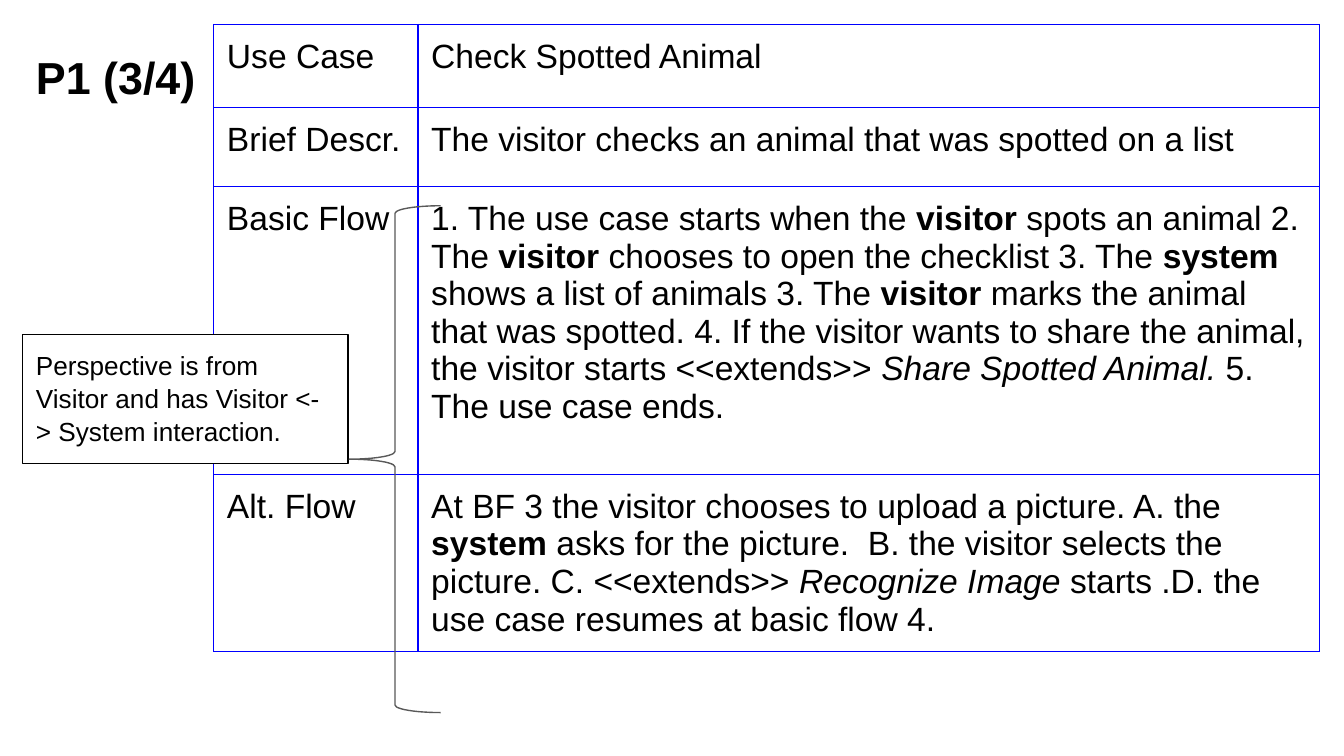
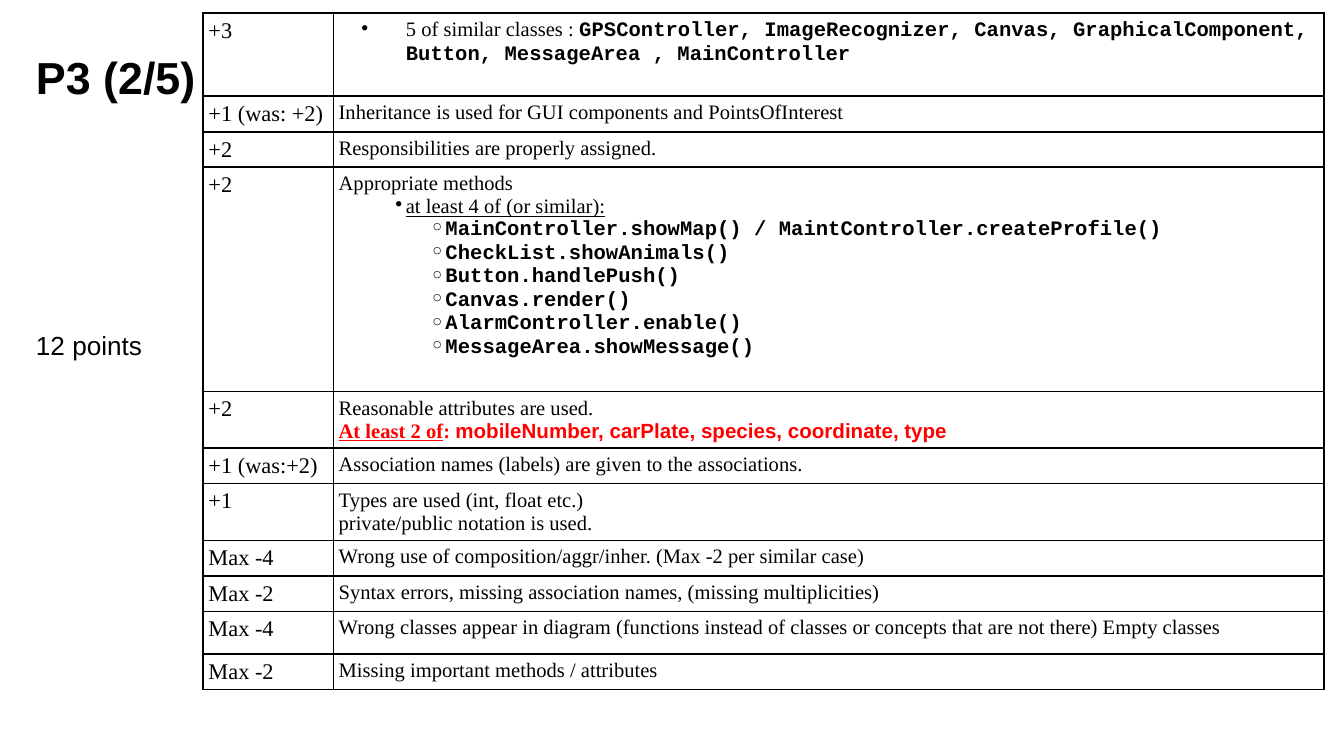
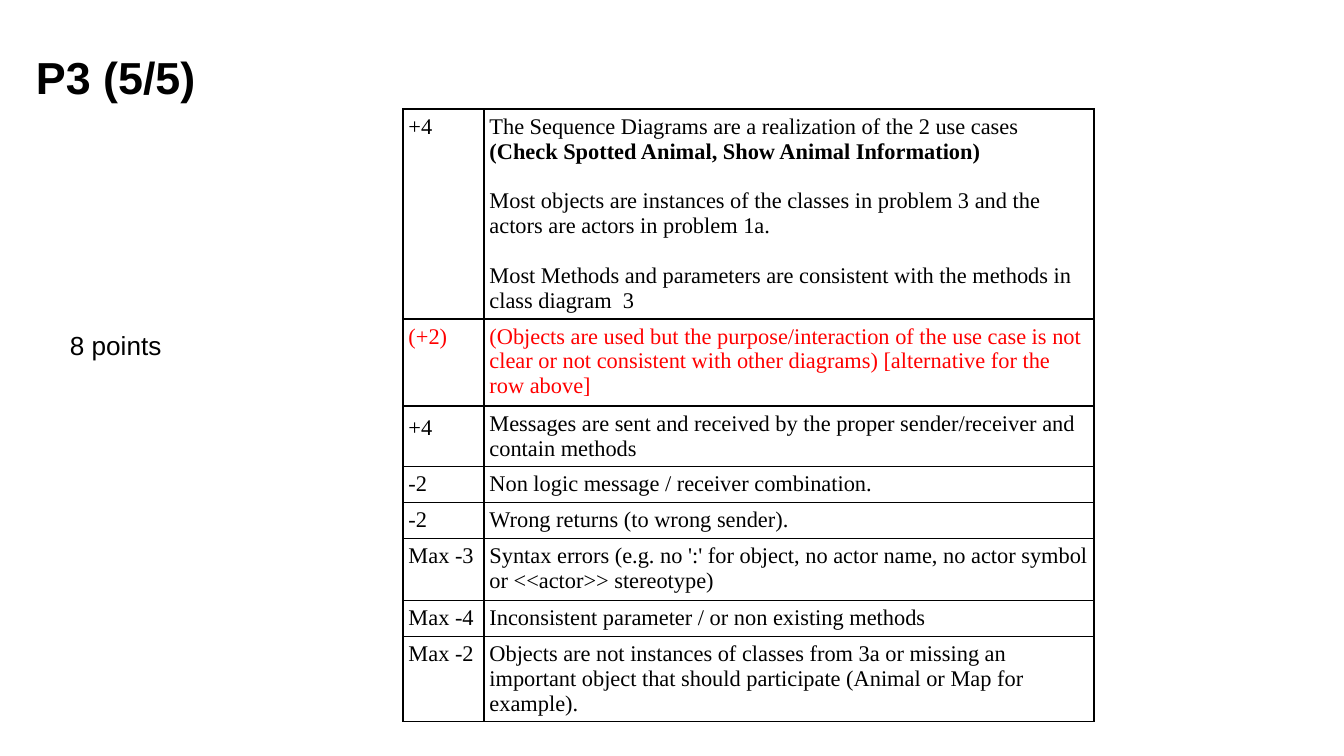
from dataclasses import dataclass

from lxml.etree import SubElement
from pptx import Presentation
from pptx.dml.color import RGBColor
from pptx.enum.shapes import MSO_SHAPE as Preset
from pptx.enum.text import MSO_ANCHOR as Anchor, PP_ALIGN as Align
from pptx.oxml import parse_xml
from pptx.oxml.ns import nsdecls, qn
from pptx.util import Cm, Pt

BLACK, WHITE, RED, BLUE, GREY = "000000", "FFFFFF", "FF0000", "0000FF", "595959"
SANS, SERIF, CODE = "Arial", "Times New Roman", "Courier New"


@dataclass
class Line:
    """One paragraph: its runs are strings or (string, format) pairs."""
    runs: list
    indent: float = 0
    hanging: float = 0
    bullet: str = ""
    level: int = 0
    spacing: float = 1.0
    after: float = 0


def color(hex_string):
    return RGBColor.from_string(hex_string)


def add_run(paragraph, text, font=SANS, size=14, ink=BLACK,
            bold=False, italic=False, underline=False):
    run = paragraph.add_run()
    run.text = text
    run.font.name, run.font.size = font, Pt(size)
    run.font.color.rgb = color(ink)
    run.font.bold, run.font.italic, run.font.underline = bold, italic, underline


def write(frame, content, **text_format):
    """Fill a text frame with a string or a list of strings and Lines."""
    lines = content if isinstance(content, list) else [content]
    for number, line in enumerate(lines):
        if isinstance(line, str):
            line = Line([line])
        paragraph = frame.paragraphs[0] if number == 0 else frame.add_paragraph()
        paragraph.alignment = Align.LEFT
        paragraph.level = line.level
        paragraph.line_spacing = line.spacing
        paragraph.space_before, paragraph.space_after = Pt(0), Pt(line.after)
        if line.bullet:
            properties = paragraph._p.get_or_add_pPr()
            properties.set("marL", str(Cm(line.indent)))
            properties.set("indent", str(-Cm(line.hanging)))
            SubElement(properties, qn("a:buChar")).set("char", line.bullet)
        for run in line.runs:
            text, changes = (run, {}) if isinstance(run, str) else run
            add_run(paragraph, text, **{**text_format, **changes})


def set_margins(holder, margin):
    holder.margin_left = holder.margin_right = Cm(margin)
    holder.margin_top = holder.margin_bottom = Cm(margin)


def set_borders(cell, ink, width):
    properties = cell._tc.get_or_add_tcPr()
    for position, side in enumerate(("lnL", "lnR", "lnT", "lnB")):
        properties.insert(position, parse_xml(
            f'<a:{side} {nsdecls("a")} w="{Pt(width)}"><a:solidFill>'
            f'<a:srgbClr val="{ink}"/></a:solidFill></a:{side}>'))


class Deck:
    PADDING = 0.25

    def __init__(self):
        self.presentation = Presentation()
        self.presentation.slide_width = Cm(25.4)
        self.presentation.slide_height = Cm(14.29)
        self.slide = None

    def add_slide(self, title):
        self.slide = self.presentation.slides.add_slide(self.presentation.slide_layouts[5])
        shape = self.slide.shapes.title
        shape.left, shape.top, shape.width, shape.height = map(Cm, (0.43, 0.58, 4.47, 1.93))
        self.fill_frame(shape, Line([title], spacing=1.1), size=24, bold=True)

    def fill_frame(self, shape, content, **text_format):
        frame = shape.text_frame
        frame.word_wrap = True
        frame.vertical_anchor = Anchor.TOP
        set_margins(frame, self.PADDING)
        write(frame, content, **text_format)

    def add_text(self, text, left, top, width, height):
        box = self.slide.shapes.add_textbox(*map(Cm, (left, top, width, height)))
        self.fill_frame(box, text)

    def add_shape(self, preset, left, top, width, height, line, fill=None):
        shape = self.slide.shapes.add_shape(preset, *map(Cm, (left, top, width, height)))
        shape.shadow.inherit = False
        if fill:
            shape.fill.solid()
            shape.fill.fore_color.rgb = color(fill)
        else:
            shape.fill.background()
        shape.line.color.rgb = color(line)
        shape.line.width = Pt(0.75)
        return shape

    def add_table(self, left, top, widths, heights, rows, formats, margin,
                  border=BLACK, border_width=1):
        """Draw rows of cell contents; formats holds one text format per column."""
        table = self.slide.shapes.add_table(
            len(heights), len(widths),
            *map(Cm, (left, top, sum(widths), sum(heights)))).table
        table.first_row = table.horz_banding = False
        for column, width in zip(table.columns, widths):
            column.width = Cm(width)
        for table_row, height, contents in zip(table.rows, heights, rows):
            table_row.height = Cm(height)
            for cell, content, text_format in zip(table_row.cells, contents, formats):
                cell.fill.background()
                set_margins(cell, margin)
                set_borders(cell, border, border_width)
                write(cell.text_frame, content, **text_format)


def bold(text):
    return text, {"bold": True}


def italic(text):
    return text, {"italic": True}


def build_use_case(deck):
    deck.add_slide("P1 (3/4)")
    basic_flow = Line([
        "1. The use case starts when the ", bold("visitor"),
        " spots an animal 2. The ", bold("visitor"),
        " chooses to open the checklist 3. The ", bold("system"),
        " shows a list of animals 3. The ", bold("visitor"),
        " marks the animal that was spotted. 4. If the visitor wants to share "
        "the animal, the visitor starts <<extends>> ",
        italic("Share Spotted Animal."), " 5. The use case ends."])
    alternative_flow = Line([
        "At BF 3 the visitor chooses to upload a picture. A. the ", bold("system"),
        " asks for the picture.  B. the visitor selects the picture. C. <<extends>> ",
        italic("Recognize Image"),
        " starts .D. the use case resumes at basic flow 4."])
    rows = [
        ("Use Case", "Check Spotted Animal"),
        ("Brief Descr.", "The visitor checks an animal that was spotted on a list"),
        ("Basic Flow", basic_flow),
        ("Alt. Flow", alternative_flow),
    ]
    deck.add_table(4.04, 0.46, (3.86, 17.04), (1.57, 1.5, 5.44, 3.15), rows,
                   [{"size": 18}] * 2, deck.PADDING, BLUE, 0.75)
    callout = deck.add_shape(Preset.RECTANGLE, 0.43, 6.32, 6.15, 2.44, BLACK, WHITE)
    deck.fill_frame(callout, Line(
        ["Perspective is from Visitor and has Visitor <-> System interaction."],
        spacing=1.05))
    deck.add_shape(Preset.LEFT_BRACE, 6.6, 3.89, 1.73, 9.58, GREY)


def build_class_grading(deck):
    deck.add_slide("P3 (2/5)")
    code = {"font": CODE, "bold": True}
    classes = ("GPSController, ImageRecognizer, Canvas, GraphicalComponent, "
               "Button, MessageArea , MainController")
    methods = ["MainController.showMap() / MaintController.createProfile()",
               "CheckList.showAnimals()", "Button.handlePush()", "Canvas.render()",
               "AlarmController.enable()", "MessageArea.showMessage()"]
    method_lines = [Line([(method, code)], 1.91, 0.2, "◦", level=1) for method in methods]
    red = {"ink": RED, "bold": True}
    rows = [
        ("+3", Line(["5 of similar classes : ", (classes, code)], 1.27, 0.84, "•")),
        ("+1 (was: +2)", "Inheritance is used for GUI components and PointsOfInterest"),
        ("+2", "Responsibilities are properly assigned."),
        ("+2", ["Appropriate methods",
                Line([("at least 4 of (or similar):", {"underline": True})],
                     1.27, 0.2, "•"),
                *method_lines]),
        ("+2", ["Reasonable attributes are used.",
                Line([("At least 2 of", {**red, "underline": True}), (": ", red),
                      ("mobileNumber, carPlate, species, coordinate, type",
                       {**red, "font": SANS})])]),
        ("+1 (was:+2)", "Association names (labels) are given to the associations."),
        ("+1", ["Types are used (int, float etc.)", "private/public notation is used."]),
        ("Max -4", "Wrong use of composition/aggr/inher. (Max -2 per similar case)"),
        ("Max -2", "Syntax errors, missing association names, (missing multiplicities)"),
        ("Max -4", "Wrong classes appear in diagram (functions instead of classes or "
                   "concepts that are not there) Empty classes"),
        ("Max -2", "Missing important methods / attributes"),
    ]
    single, double = 0.66, 1.07
    heights = (1.57, single, single, 4.24, double, single, double,
               single, single, 0.81, single)
    deck.add_table(3.84, 0.25, (2.46, 18.72), heights, rows,
                   [{"font": SERIF, "size": 12}, {"font": SERIF, "size": 11}], 0.1)
    deck.add_text("12 points", 0.43, 5.97, 3.15, 1.68)


def build_sequence_grading(deck):
    deck.add_slide("P3 (5/5)")
    red = {"ink": RED}
    gap = 13.4
    rows = [
        ("+4", [Line(["The Sequence Diagrams are a realization of the 2 use cases ",
                      bold("(Check Spotted Animal, Show Animal Information)")], after=gap),
                Line(["Most objects are instances of the classes in problem 3 and "
                      "the actors are actors in problem 1a."], after=gap),
                "Most Methods and parameters are consistent with the methods in "
                "class diagram  3"]),
        (Line([("(+2)", red)]),
         Line([("(Objects are used but the purpose/interaction of the use case is not "
                "clear or not consistent with other diagrams) [alternative for the "
                "row above]", red)])),
        (Line(["+4"], spacing=1.15, after=10),
         "Messages are sent and received by the proper sender/receiver and "
         "contain methods"),
        ("-2", "Non logic message / receiver combination."),
        ("-2", "Wrong returns (to wrong sender)."),
        ("Max -3", "Syntax errors (e.g. no ':' for object, no actor name, no actor "
                   "symbol or <<actor>> stereotype)"),
        ("Max -4", "Inconsistent parameter / or non existing methods"),
        ("Max -2", "Objects are not instances of classes from 3a or missing an "
                   "important object that should participate (Animal or Map for "
                   "example)."),
    ]
    single = 0.68
    heights = (3.63, 1.65, 1.09, single, single, 1.17, single, single)
    deck.add_table(7.62, 2.06, (1.53, 11.53), heights, rows,
                   [{"font": SERIF, "size": 12}] * 2, 0.1)
    deck.add_text("8 points", 1.07, 5.97, 3.84, 1.68)


def main():
    deck = Deck()
    build_use_case(deck)
    build_class_grading(deck)
    build_sequence_grading(deck)
    deck.presentation.save("out.pptx")


if __name__ == "__main__":
    main()
